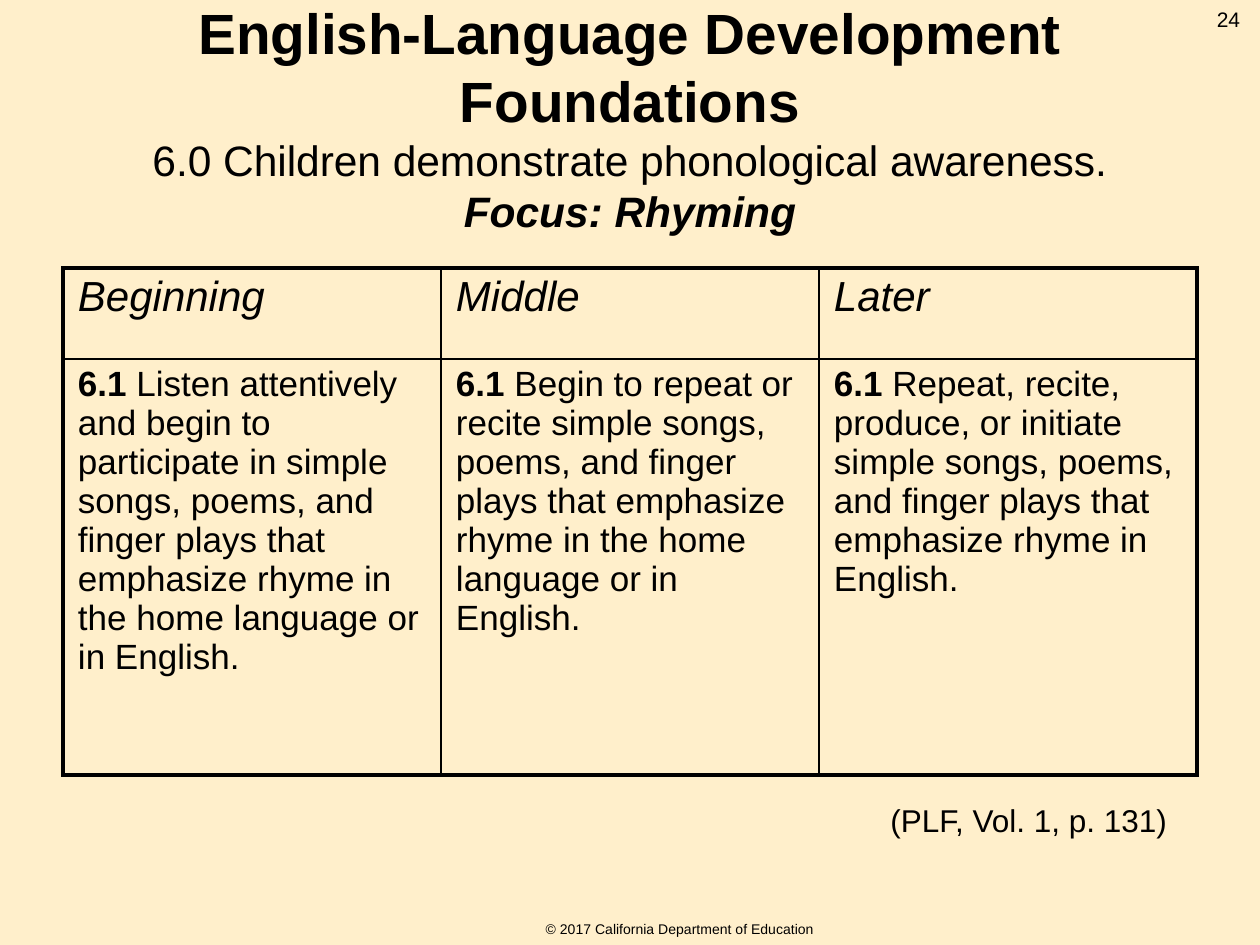
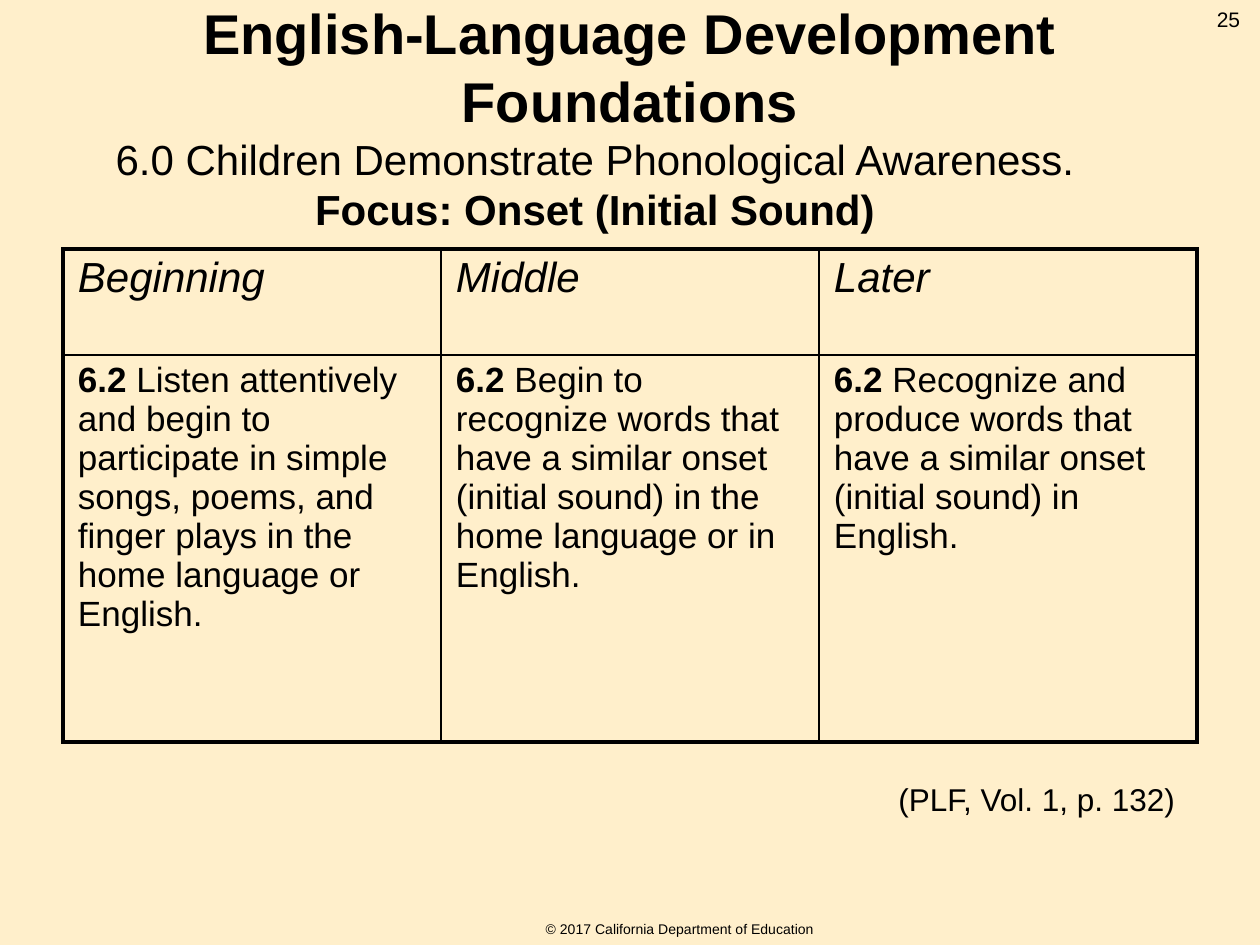
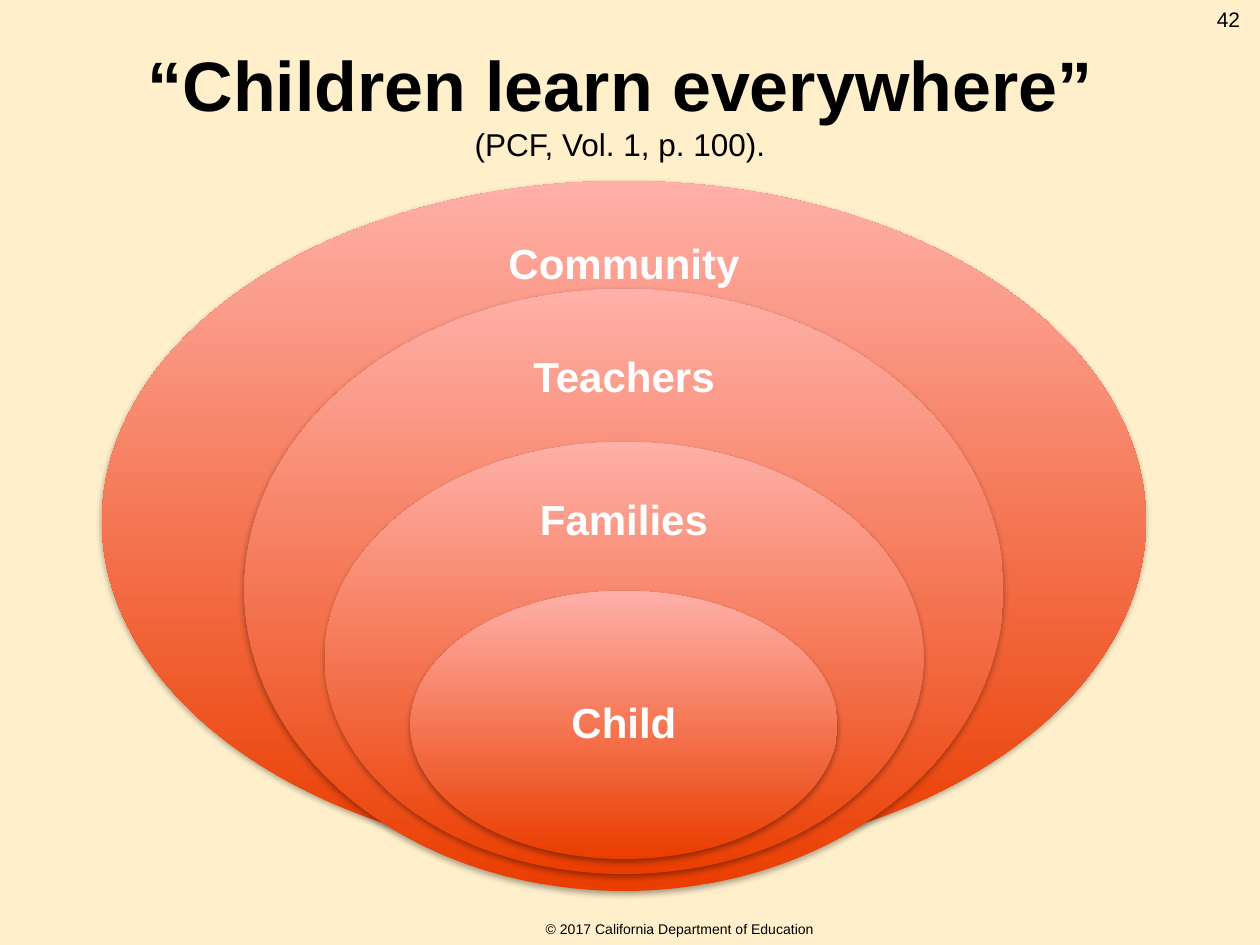
from dataclasses import dataclass

import pptx
import pptx.dml.color
import pptx.enum.shapes
import pptx.enum.text
import pptx.oxml.ns
import pptx.util
from lxml import etree

PX_PER_INCH = 126
ALIGN = pptx.enum.text.PP_ALIGN
ANCHOR = pptx.enum.text.MSO_ANCHOR


def px(length):
    return pptx.util.Emu(round(length * 914400 / PX_PER_INCH))


@dataclass(frozen=True)
class Theme:
    font: str = "Arial"
    paper: str = "FFEFCB"
    ink: str = "000000"
    label: str = "FFFFFF"
    ring_bottom: str = "EA3D00"
    ring_top: str = "FFB0A8"
    headline: float = 32
    subtitle: float = 24
    big_headline: float = 40
    stage: float = 24
    standard: float = 20
    citation: float = 18
    page_number: float = 12
    copyright: float = 8
    frame: float = 2.25
    rule: float = 1


THEME = Theme()


@dataclass(frozen=True)
class TitleLine:
    text: str
    size: float
    bold: bool = False
    italic: bool = False
    right_margin: int = 0


COPYRIGHT = "© 2017 California Department of Education"
COPYRIGHT_BOX = (100, 914, 1160, 30)
NUMBER_BOX = (1197, 0, 63, 50)
STAGES = ("Beginning", "Middle", "Later")

FOUNDATION_PAGES = [
    dict(
        number="24",
        title=[
            TitleLine("English-Language Development Foundations", 32.4, bold=True),
            TitleLine("6.0 Children demonstrate phonological awareness.", 24.3),
            TitleLine("Focus: Rhyming", 24.3, bold=True, italic=True),
        ],
        table_box=(63, 268, 1134, 507),
        header_height=91,
        code="6.1",
        standards=[
            "Listen attentively and begin to participate in simple songs, poems, and "
            "finger plays that emphasize rhyme in the home language or in English.",
            "Begin to repeat or recite simple songs, poems, and finger plays that "
            "emphasize rhyme in the home language or in English.",
            "Repeat, recite, produce, or initiate simple songs, poems, and finger "
            "plays that emphasize rhyme in English.",
        ],
        citation="(PLF, Vol. 1, p. 131)",
        citation_box=(878, 795, 319, 50),
    ),
    dict(
        number="25",
        title=[
            TitleLine("English-Language Development Foundations", THEME.headline, bold=True),
            TitleLine("6.0 Children Demonstrate Phonological Awareness.", THEME.subtitle,
                      right_margin=70),
            TitleLine("Focus: Onset (Initial Sound)", THEME.subtitle, bold=True),
        ],
        table_box=(63, 249, 1134, 493),
        header_height=106,
        code="6.2",
        standards=[
            "Listen attentively and begin to participate in simple songs, poems, and "
            "finger plays in the home language or English.",
            "Begin to recognize words that have a similar onset (initial sound) in the "
            "home language or in English.",
            "Recognize and produce words that have a similar onset (initial sound) in "
            "English.",
        ],
        citation="(PLF, Vol. 1, p. 132)",
        citation_box=(886, 774, 311, 50),
    ),
]

EVERYWHERE_TITLE = [
    TitleLine("“Children learn everywhere”", THEME.big_headline, bold=True, right_margin=20),
    TitleLine("(PCF, Vol. 1, p. 100).", THEME.citation),
]
# name, top, width, height, middle of label; tops and middles count from the diagram's top
RINGS = [
    ("Community", 0, 1044, 680, 85),
    ("Teachers", 108, 759, 602, 198),
    ("Families", 261, 599, 432, 341),
    ("Child", 410, 427, 268, 544),
]


def rgb(color):
    return pptx.dml.color.RGBColor.from_string(color)


def style(font, size, color=THEME.ink, bold=False, italic=False):
    font.name = THEME.font
    font.size = pptx.util.Pt(size)
    font.color.rgb = rgb(color)
    font.bold = bold
    font.italic = italic


def add_text(page, box, text, size, align=ALIGN.LEFT, anchor=ANCHOR.TOP,
             color=THEME.ink, bold=False):
    frame = page.shapes.add_textbox(*map(px, box)).text_frame
    frame.word_wrap = True
    frame.vertical_anchor = anchor
    para = frame.paragraphs[0]
    para.text = text
    para.alignment = align
    style(para.font, size, color, bold)
    return frame


def fill_title(page, box, lines):
    title = page.shapes.title
    title.left, title.top, title.width, title.height = map(px, box)
    frame = title.text_frame
    frame.auto_size = pptx.enum.text.MSO_AUTO_SIZE.NONE
    frame.vertical_anchor = ANCHOR.MIDDLE
    frame.text = "\n".join(line.text for line in lines)
    for para, line in zip(frame.paragraphs, lines):
        para.alignment = ALIGN.CENTER
        if line.right_margin:
            para._p.get_or_add_pPr().set("marR", str(px(line.right_margin)))
        style(para.font, line.size, bold=line.bold, italic=line.italic)


def start_page(deck, number, title_box, title_lines):
    """Add a slide with its title, copyright line and page number."""
    page = deck.slides.add_slide(deck.slide_layouts.get_by_name("Title Only"))
    add_text(page, COPYRIGHT_BOX, COPYRIGHT, THEME.copyright, ALIGN.CENTER, ANCHOR.MIDDLE)
    fill_title(page, title_box, title_lines)
    add_text(page, NUMBER_BOX, number, THEME.page_number, ALIGN.CENTER)
    return page


def set_borders(cell, widths):
    """Draw the four sides of a cell; widths maps L, R, T, B to points."""
    properties = cell._tc.get_or_add_tcPr()
    qn = pptx.oxml.ns.qn
    for side, width in widths.items():
        line = etree.SubElement(properties, qn(f"a:ln{side}"),
                                w=str(pptx.util.Pt(width)))
        fill = etree.SubElement(line, qn("a:solidFill"))
        etree.SubElement(fill, qn("a:srgbClr"), val=THEME.ink)


def add_stage_table(page, box, header_height, code, standards):
    left, top, width, height = box
    columns = len(STAGES)
    table = page.shapes.add_table(2, columns, *map(px, box)).table
    table.first_row = table.horz_banding = False
    table.rows[0].height = px(header_height)
    table.rows[1].height = px(height - header_height)

    for column, (stage, standard) in enumerate(zip(STAGES, standards)):
        table.columns[column].width = px(width / columns)
        for row in range(2):
            cell = table.cell(row, column)
            cell.margin_left = cell.margin_right = px(15)
            cell.margin_top = cell.margin_bottom = px(6)
            on_frame = {"L": column == 0, "R": column == columns - 1,
                        "T": row == 0, "B": row == 1}
            set_borders(cell, {side: THEME.frame if outer else THEME.rule
                               for side, outer in on_frame.items()})
            cell.fill.background()

        heading = table.cell(0, column).text_frame.paragraphs[0]
        heading.text = stage
        style(heading.font, THEME.stage, italic=True)

        para = table.cell(1, column).text_frame.paragraphs[0]
        for text, bold in ((code, True), (f" {standard}", False)):
            span = para.add_run()
            span.text = text
            style(span.font, THEME.standard, bold=bold)


def add_foundation_page(deck, number, title, table_box, header_height, code, standards,
                        citation, citation_box):
    page = start_page(deck, number, (63, 38, 1134, 157), title)
    add_stage_table(page, table_box, header_height, code, standards)
    add_text(page, citation_box, citation, THEME.citation)


def add_ring(page, box):
    ring = page.shapes.add_shape(pptx.enum.shapes.MSO_SHAPE.OVAL, *map(px, box))
    ring.fill.gradient()
    ring.fill.gradient_angle = 90
    for stop, color in zip(ring.fill.gradient_stops, (THEME.ring_bottom, THEME.ring_top)):
        stop.color.rgb = rgb(color)
    ring.line.fill.background()
    ring.shadow.inherit = False
    qn = pptx.oxml.ns.qn
    effects = ring._element.spPr.find(qn("a:effectLst"))
    shadow = etree.SubElement(effects, qn("a:outerShdw"), blurRad="40000", dist="23000",
                              dir="5400000", rotWithShape="0")
    color = etree.SubElement(shadow, qn("a:srgbClr"), val=THEME.ink)
    etree.SubElement(color, qn("a:alpha"), val="35000")


def add_nested_rings(page, box):
    """Stack the rings on one vertical axis, the widest at the back."""
    left, top, width, height = box
    axis = left + width / 2
    label_width, label_height = 300, 100
    for name, ring_top, ring_width, ring_height, label_middle in RINGS:
        add_ring(page, (axis - ring_width / 2, top + ring_top, ring_width, ring_height))
        label_box = (axis - label_width / 2, top + label_middle - label_height / 2,
                     label_width, label_height)
        frame = add_text(page, label_box, name, THEME.subtitle, ALIGN.CENTER,
                         ANCHOR.MIDDLE, THEME.label, bold=True)
        frame.paragraphs[0].line_spacing = 0.9


def add_everywhere_page(deck):
    page = start_page(deck, "42", (0, 25, 1260, 154), EVERYWHERE_TITLE)
    add_nested_rings(page, (102, 181, 1044, 710))


def main():
    deck = pptx.Presentation()
    deck.slide_width, deck.slide_height = px(1260), px(945)
    background = deck.slide_master.background.fill
    background.solid()
    background.fore_color.rgb = rgb(THEME.paper)

    for content in FOUNDATION_PAGES:
        add_foundation_page(deck, **content)
    add_everywhere_page(deck)
    deck.save("out.pptx")


if __name__ == "__main__":
    main()
